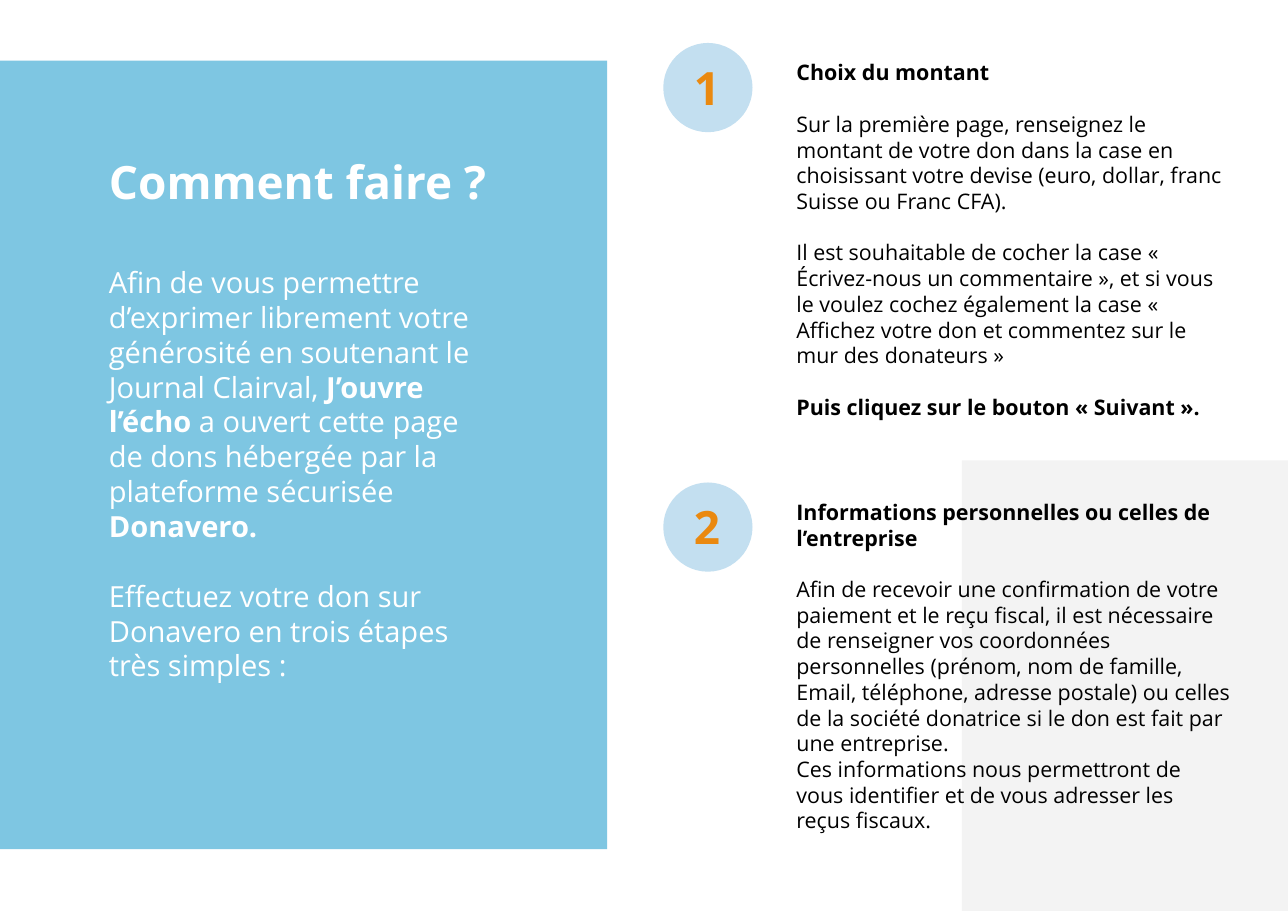
from dataclasses import dataclass

from pptx import Presentation
from pptx.dml.color import RGBColor
from pptx.enum.shapes import MSO_SHAPE
from pptx.enum.text import MSO_ANCHOR
from pptx.slide import Slide
from pptx.util import Inches, Pt

FONT = "Open Sans"
LINE_HEIGHT = 1.2
STEP_TOP = 0.39
STEP_PITCH = 3.99


@dataclass
class Run:
    text: str
    bold: bool = False


@dataclass
class Block:
    runs: list[Run]
    gap_before: bool = False


@dataclass
class Style:
    size: float
    color: str


@dataclass
class Box:
    left: float
    top: float
    width: float
    height: float

    def lengths(self) -> list[int]:
        return [Inches(value) for value in (self.left, self.top, self.width, self.height)]


@dataclass
class Step:
    number: str
    blocks: list[Block]


PANEL_TITLE = Style(30, "FFFFFF")
PANEL_BODY = Style(19, "FFFFFF")
STEP_NUMBER = Style(30, "EA8910")
STEP_BODY = Style(14, "000000")

INTRODUCTION = [
    Block([
        Run("Afin de vous permettre d’exprimer librement votre générosité en soutenant le Journal Clairval, "),
        Run("J’ouvre l’écho", True),
        Run(" a ouvert cette page de dons hébergée par la plateforme sécurisée "),
        Run("Donavero.", True),
    ]),
    Block([Run("Effectuez votre don sur Donavero en trois étapes très simples :")], True),
]

STEPS = [
    Step("1", [
        Block([Run("Choix du montant", True)]),
        Block([Run("Sur la première page, renseignez le montant de votre don dans la case en "
                   "choisissant votre devise (euro, dollar, franc Suisse ou Franc CFA).")], True),
        Block([Run("Il est souhaitable de cocher la case « Écrivez-nous un commentaire », et si vous "
                   "le voulez cochez également la case « Affichez votre don et commentez sur le "
                   "mur des donateurs »")], True),
        Block([Run("Puis cliquez sur le bouton « Suivant ».", True)], True),
    ]),
    Step("2", [
        Block([Run("Informations personnelles ou celles de l’entreprise", True)]),
        Block([Run("Afin de recevoir une confirmation de votre paiement et le reçu fiscal, il est "
                   "nécessaire de renseigner vos coordonnées personnelles (prénom, nom de famille, "
                   "Email, téléphone, adresse postale) ou celles de la société donatrice si le don "
                   "est fait par une entreprise.")], True),
        Block([Run("Ces informations nous permettront de vous identifier et de vous adresser les "
                   "reçus fiscaux.")]),
    ]),
]


def rgb(color: str) -> RGBColor:
    return RGBColor.from_string(color)


def add_filled_shape(slide: Slide, kind: MSO_SHAPE, box: Box, color: str) -> None:
    shape = slide.shapes.add_shape(kind, *box.lengths())
    shape.shadow.inherit = False
    shape.fill.solid()
    shape.fill.fore_color.rgb = rgb(color)
    shape.line.fill.background()


def add_text(slide: Slide, box: Box, blocks: list[Block], style: Style) -> None:
    frame = slide.shapes.add_textbox(*box.lengths()).text_frame
    frame.word_wrap = True
    frame.vertical_anchor = MSO_ANCHOR.TOP
    frame.margin_left = frame.margin_right = Inches(0.1)
    frame.margin_top = frame.margin_bottom = Inches(0.1)
    for index, block in enumerate(blocks):
        paragraph = frame.add_paragraph() if index else frame.paragraphs[0]
        paragraph.space_before = Pt(style.size * LINE_HEIGHT if block.gap_before else 0)
        for part in block.runs:
            run = paragraph.add_run()
            run.text = part.text
            run.font.name = FONT
            run.font.size = Pt(style.size)
            run.font.bold = part.bold
            run.font.color.rgb = rgb(style.color)


def add_step(slide: Slide, step: Step, top: float) -> None:
    text_top = top + 0.05
    add_filled_shape(slide, MSO_SHAPE.OVAL, Box(6.02, top, 0.81, 0.81), "C3DFF0")
    add_text(slide, Box(6.2, text_top, 0.46, 0.71), [Block([Run(step.number, True)])], STEP_NUMBER)
    add_text(slide, Box(7.13, text_top, 4.14, 3.74), step.blocks, STEP_BODY)


def main() -> None:
    presentation = Presentation()
    presentation.slide_width = Inches(11.69)
    presentation.slide_height = Inches(8.27)
    slide = presentation.slides.add_slide(presentation.slide_layouts[6])

    add_filled_shape(slide, MSO_SHAPE.RECTANGLE, Box(8.73, 4.18, 2.96, 4.09), "F3F3F3")
    add_filled_shape(slide, MSO_SHAPE.RECTANGLE, Box(0, 0.55, 5.51, 7.16), "7EC6E2")
    add_text(slide, Box(0.89, 1.29, 4.11, 0.71), [Block([Run("Comment faire ?", True)])], PANEL_TITLE)
    add_text(slide, Box(0.89, 2.3, 3.7, 4.68), INTRODUCTION, PANEL_BODY)
    for index, step in enumerate(STEPS):
        add_step(slide, step, STEP_TOP + index * STEP_PITCH)

    presentation.save("out.pptx")


if __name__ == "__main__":
    main()
